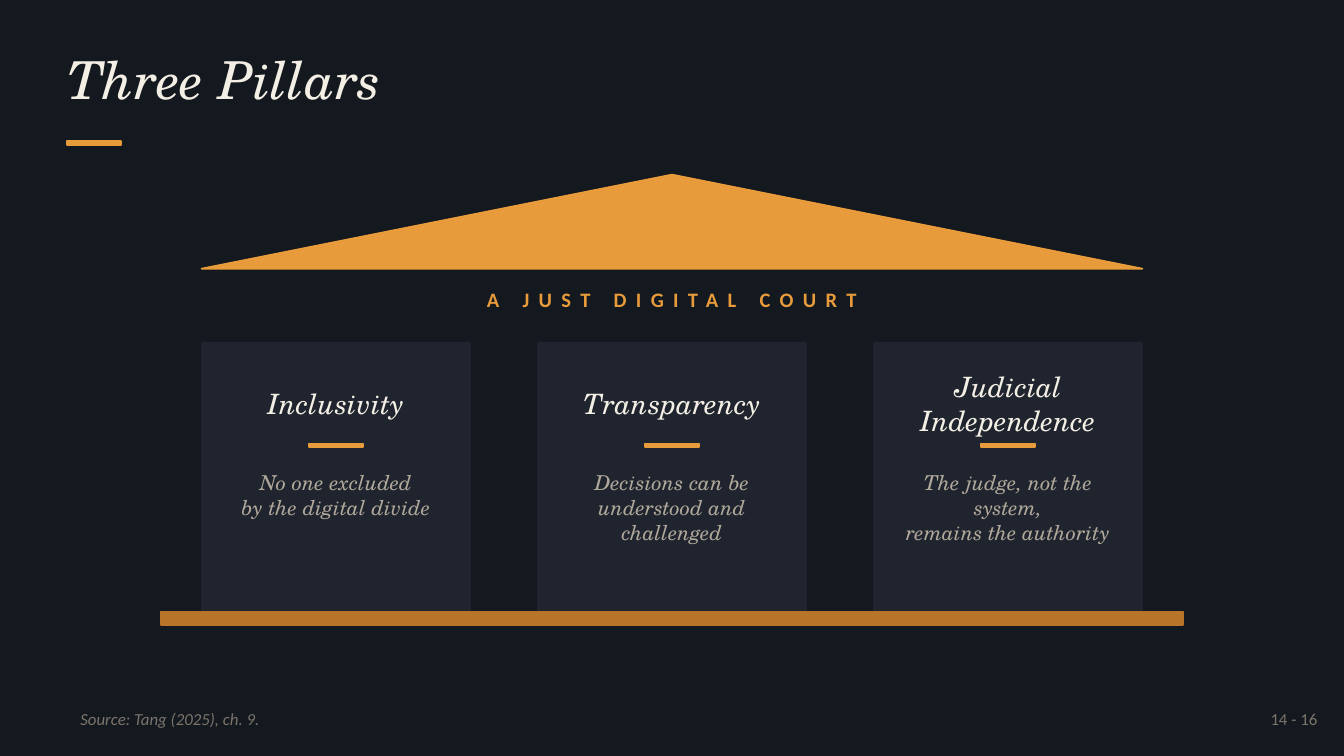
from pptx import Presentation
from pptx.dml.color import RGBColor
from pptx.enum.shapes import MSO_SHAPE
from pptx.enum.text import MSO_ANCHOR, MSO_AUTO_SIZE, PP_ALIGN
from pptx.util import Pt

RECT, ROOF = MSO_SHAPE.RECTANGLE, MSO_SHAPE.ISOSCELES_TRIANGLE
TOP, MID = MSO_ANCHOR.TOP, MSO_ANCHOR.MIDDLE
LEFT, CENTER, RIGHT = PP_ALIGN.LEFT, PP_ALIGN.CENTER, PP_ALIGN.RIGHT

TITLE = "Three Pillars"
BANNER = "A JUST DIGITAL COURT"
PILLARS = [
    ("Inclusivity", "No one excluded\nby the digital divide"),
    ("Transparency", "Decisions can be\nunderstood and challenged"),
    ("Judicial Independence", "The judge, not the system,\nremains the authority"),
]
SOURCE = "Source: Tang (2025), ch. 9."
PAGE = "14 - 16"

COLORS = {
    "night": "14181F", "panel": "1F242E", "gold": "E89B3A", "bronze": "B87529",
    "cream": "F4EFE5", "sand": "B0A89A", "stone": "7A746A",
}
SERIF, SANS = "TeX Gyre Schola", "Calibri"

PX = 4572
WIDE, HIGH = 2000, 1125
EDGE = 100
HALL_X, HALL_W = 300, 1400
PILLAR_Y, PILLAR_W, PILLAR_H = 510, 400, 400
STEP = (HALL_W - PILLAR_W) // (len(PILLARS) - 1)
RULE_W, RULE_H = 80, 6
PAD = 20
BASE_OUT = 60
FOOT_Y, FOOT_H = 1040, 60


def color(name):
    return RGBColor.from_string(COLORS[name])


def place(shape, box):
    shape.left, shape.top, shape.width, shape.height = (n * PX for n in box)


def write(slide, text, box, *, size, ink, face=SERIF, bold=False, italic=True,
          align=CENTER, anchor=MID, track=0, shape=None):
    shape = shape or slide.shapes.add_textbox(0, 0, 0, 0)
    place(shape, box)
    frame = shape.text_frame
    frame.text = text
    frame.word_wrap = True
    frame.auto_size = MSO_AUTO_SIZE.NONE
    frame.vertical_anchor = anchor
    for para in frame.paragraphs:
        para.alignment = align
        for run in para.runs:
            font = run.font
            font.name, font.size = face, Pt(size)
            font.bold, font.italic = bold, italic
            font.color.rgb = color(ink)
            if track:
                font._element.set("spc", str(track * 100))
    return frame


def draw(slide, kind, box, ink):
    shape = slide.shapes.add_shape(kind, 0, 0, 0, 0)
    place(shape, box)
    shape.shadow.inherit = False
    shape.fill.solid()
    shape.fill.fore_color.rgb = color(ink)
    shape.line.color.rgb = color(ink)
    shape.line.width = Pt(1)


def main():
    deck = Presentation()
    deck.slide_width, deck.slide_height = WIDE * PX, HIGH * PX
    slide = deck.slides.add_slide(deck.slide_layouts[5])
    slide.background.fill.solid()
    slide.background.fill.fore_color.rgb = color("night")

    frame = write(slide, TITLE, (EDGE, 70, WIDE - 2 * EDGE, 160), size=28,
                  ink="cream", align=LEFT, anchor=TOP, shape=slide.shapes.title)
    frame.margin_left = frame.margin_right = 0
    frame.margin_top = frame.margin_bottom = 0
    draw(slide, RECT, (EDGE, 210, RULE_W, RULE_H), "gold")

    draw(slide, ROOF, (HALL_X, 260, HALL_W, 140), "gold")
    write(slide, BANNER, (HALL_X, 410, HALL_W, 70), size=11, ink="gold",
          face=SANS, bold=True, italic=False, track=5)

    for i, (name, claim) in enumerate(PILLARS):
        x = HALL_X + i * STEP
        mid = x + (PILLAR_W - RULE_W) // 2
        draw(slide, RECT, (x, PILLAR_Y, PILLAR_W, PILLAR_H), "panel")
        write(slide, name, (x, PILLAR_Y + 30, PILLAR_W, 120), size=15, ink="cream")
        draw(slide, RECT, (mid, PILLAR_Y + 150, RULE_W, RULE_H), "gold")
        write(slide, claim, (x + PAD, PILLAR_Y + 180, PILLAR_W - 2 * PAD, 200),
              size=11, ink="sand", anchor=TOP)

    draw(slide, RECT, (HALL_X - BASE_OUT, PILLAR_Y + PILLAR_H,
                       HALL_W + 2 * BASE_OUT, 20), "bronze")

    write(slide, SOURCE, (EDGE, FOOT_Y, 1600, FOOT_H), size=9, ink="stone",
          face=SANS, align=LEFT)
    write(slide, PAGE, (1740, FOOT_Y, 240, FOOT_H), size=9, ink="stone",
          face=SANS, italic=False, align=RIGHT)

    deck.save("out.pptx")


if __name__ == "__main__":
    main()
